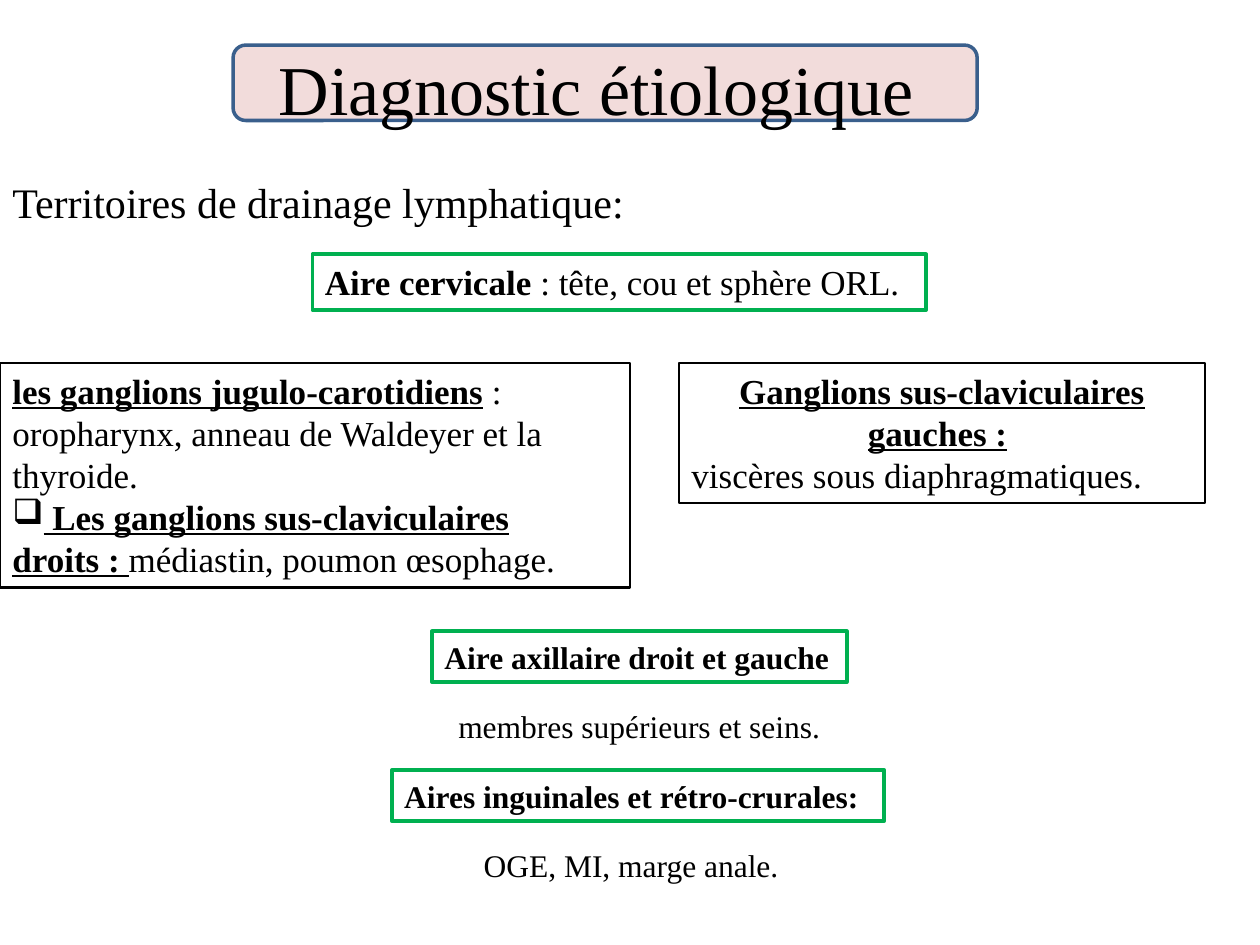
from dataclasses import dataclass

from lxml.etree import SubElement
from pptx import Presentation
from pptx.dml.color import RGBColor
from pptx.enum.shapes import MSO_SHAPE
from pptx.enum.text import MSO_ANCHOR, MSO_AUTO_SIZE, PP_ALIGN
from pptx.oxml.ns import qn
from pptx.slide import Slide
from pptx.util import Cm, Pt

BLACK = RGBColor(0x00, 0x00, 0x00)
GREEN = RGBColor(0x00, 0xB0, 0x50)
PINK = RGBColor(0xF2, 0xDC, 0xDB)
BLUE = RGBColor(0x3A, 0x5F, 0x8C)
FONT = "Times New Roman"


@dataclass
class Run:
    text: str
    bold: bool = False
    underline: bool = False


@dataclass
class Para:
    runs: list[Run]
    align: PP_ALIGN = PP_ALIGN.LEFT
    bullet: str = ""


@dataclass
class Box:
    left: float
    top: float
    width: float
    height: float
    size: int
    paras: list[Para]
    line: RGBColor | None = None
    weight: float = 0


def fill_paragraph(p, para: Para, size: int) -> None:
    p.alignment = para.align
    if para.bullet:
        pPr = p._p.get_or_add_pPr()
        pPr.set("marL", "0")
        pPr.set("indent", "0")
        SubElement(pPr, qn("a:buChar"), char=para.bullet)
    for run in para.runs:
        r = p.add_run()
        r.text = run.text
        r.font.name = FONT
        r.font.size = Pt(size)
        r.font.bold = run.bold
        r.font.underline = run.underline
        r.font.color.rgb = BLACK


def draw_box(s: Slide, box: Box) -> None:
    place = [Cm(v) for v in (box.left, box.top, box.width, box.height)]
    if box.line is None:
        sp = s.shapes.add_textbox(*place)
    else:
        sp = s.shapes.add_shape(MSO_SHAPE.RECTANGLE, *place)
        sp.shadow.inherit = False
        sp.fill.background()
        sp.line.color.rgb = box.line
        sp.line.width = Pt(box.weight)
    tf = sp.text_frame
    tf.word_wrap = True
    tf.vertical_anchor = MSO_ANCHOR.TOP
    for i, para in enumerate(box.paras):
        p = tf.add_paragraph() if i else tf.paragraphs[0]
        fill_paragraph(p, para, box.size)


def draw_title(s: Slide, text: str) -> None:
    left, width, height = Cm(4.7), Cm(15), Cm(1.52)
    title = s.shapes.title
    title.left, title.top, title.width, title.height = left, Cm(1), width, height
    tf = title.text_frame
    tf.auto_size = MSO_AUTO_SIZE.NONE
    tf.vertical_anchor = MSO_ANCHOR.MIDDLE
    tf.margin_top = tf.margin_bottom = 0
    fill_paragraph(tf.paragraphs[0], Para([Run(text)], PP_ALIGN.CENTER), 40)

    frame = s.shapes.add_shape(MSO_SHAPE.ROUNDED_RECTANGLE, left, Cm(0.91), width, height)
    frame.shadow.inherit = False
    frame.fill.solid()
    frame.fill.fore_color.rgb = PINK
    frame.line.color.rgb = BLUE
    frame.line.width = Pt(2)
    title.element.addprevious(frame.element)


NODES_TOP = 7.32
AREAS_TOP, AREA_STEP, AREA_HEIGHT = 12.73, 1.4, 1.02

BOXES = [
    Box(0, 3.43, 25.4, 1.17, 24, [Para([Run("Territoires de drainage lymphatique:")])]),
    Box(0, NODES_TOP, 12.7, 4.52, 20, [
        Para([Run("les ganglions jugulo-carotidiens", True, True),
              Run(" : oropharynx, anneau de Waldeyer et la thyroide.")]),
        Para([Run(" Les ganglions sus-claviculaires droits : ", True, True),
              Run("médiastin, poumon œsophage.")], bullet="❑"),
    ], BLACK, 1.5),
    Box(13.69, NODES_TOP, 10.6, 2.82, 20, [
        Para([Run("Ganglions sus-claviculaires gauches :", True, True), Run(" ")],
             PP_ALIGN.CENTER),
        Para([Run("viscères sous diaphragmatiques.")]),
    ], BLACK, 1.5),
    Box(6.3, 5.13, 12.37, 1.12, 20, [
        Para([Run("Aire cervicale", True), Run(" : tête, cou et sphère ORL.")]),
    ], GREEN, 2.25),
]

AREAS = [
    (8.71, 8.36, Para([Run("Aire axillaire droit et gauche", True)]), GREEN),
    (8.31, 9, Para([Run(" membres supérieurs et seins.")], PP_ALIGN.CENTER), None),
    (7.9, 9.93, Para([Run("Aires inguinales et rétro-crurales:", True)]), GREEN),
    (9.5, 7.2, Para([Run("OGE, MI, marge anale.")]), None),
]


def main() -> None:
    prs = Presentation()
    prs.slide_width, prs.slide_height = Cm(25.4), Cm(19.05)
    s = prs.slides.add_slide(prs.slide_layouts[5])
    draw_title(s, "Diagnostic étiologique ")
    for box in BOXES:
        draw_box(s, box)
    for i, (left, width, para, line) in enumerate(AREAS):
        top = AREAS_TOP + i * AREA_STEP
        draw_box(s, Box(left, top, width, AREA_HEIGHT, 18, [para], line, 2.25))
    prs.save("out.pptx")


if __name__ == "__main__":
    main()
